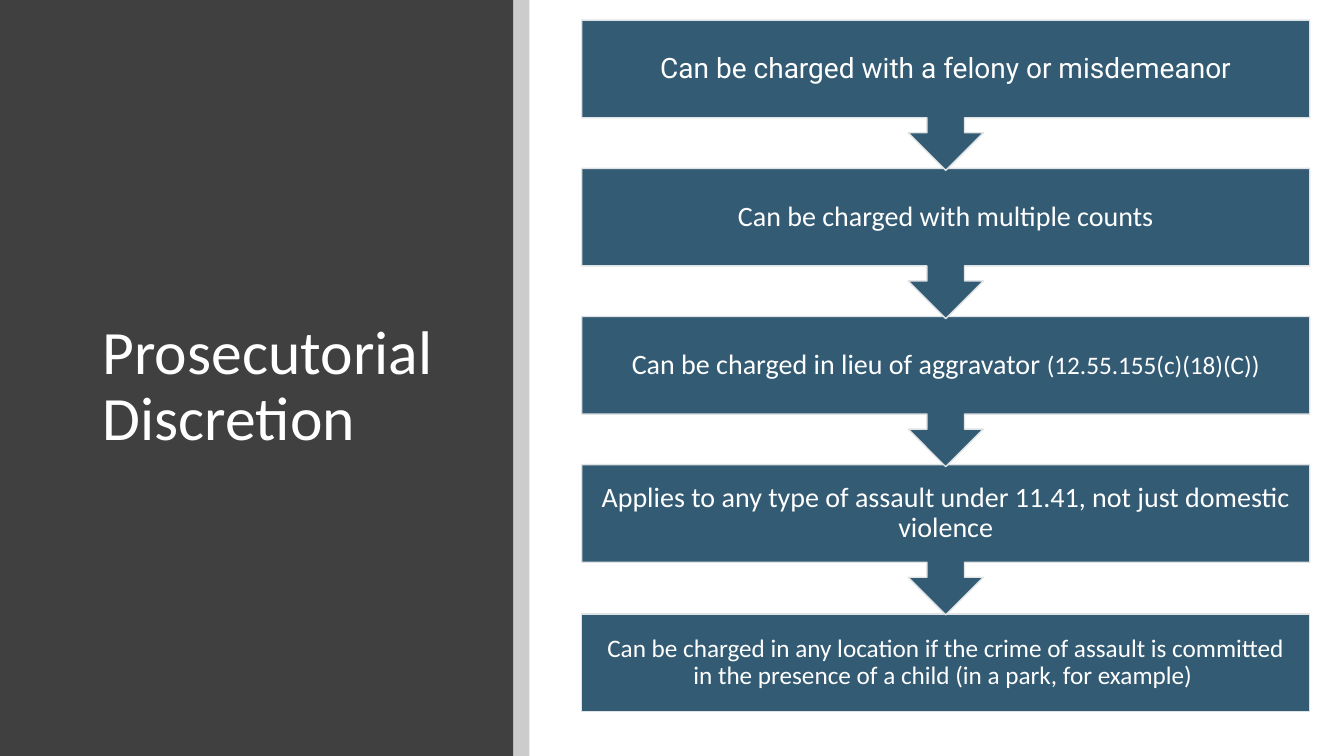
import pptx
import pptx.util
import pptx.dml.color
import pptx.enum.shapes
import pptx.enum.text
import pptx.oxml.ns
from lxml import etree

PX = 9144  # EMU per px, 100 px to the inch
SHAPE = pptx.enum.shapes.MSO_SHAPE
ALIGN = pptx.enum.text.PP_ALIGN
WHITE, GREY, BLACK = "FFFFFF", "404040", "000000"
BLUE, PALE = "335B74", "DFE3E5"

# Each step: inset in px, then runs of (text, size, font)
STEPS = [
    (16, [("Can be charged with a felony or misdemeanor", 20, "Roboto")]),
    (16, [("Can be charged with multiple counts", 20, "Calibri")]),
    (16, [("Can be charged in lieu of aggravator ", 20, "Calibri"),
          ("(12.55.155(c)(18)(C))", 18, "Calibri")]),
    (16, [("Applies to any type of assault under 11.41, not just domestic "
           "violence", 20, "Calibri")]),
    (14, [("Can be charged in any location if the crime of assault is "
           "committed in the presence of a child (in a park, for example) ",
           18, "Calibri")]),
]
STEP_LEFT, STEP_TOP, STEP_WIDTH = 577, 20, 722
BOX_HEIGHT, CALLOUT_HEIGHT = 97, 149
LAST_TOP = 609


def emu(*lengths):
    return [pptx.util.Emu(n * PX) for n in lengths]


def rgb(value):
    return pptx.dml.color.RGBColor.from_string(value)


def set_all(target, values):
    for name, value in values.items():
        setattr(target, name, value)


def add_block(s, kind, box, fill, line=None, alpha=None):
    sp = s.shapes.add_shape(kind, *emu(*box))
    sp.shadow.inherit = False
    sp.fill.solid()
    sp.fill.fore_color.rgb = rgb(fill)
    if line:
        sp.line.color.rgb = rgb(line)
        sp.line.width = pptx.util.Pt(1)
    else:
        sp.line.fill.background()
    if alpha is not None:
        qn = pptx.oxml.ns.qn
        clr = sp.fill._xPr.find(qn("a:solidFill")).find(qn("a:srgbClr"))
        etree.SubElement(clr, qn("a:alpha")).set("val", str(alpha * 1000))
    return sp


def write_text(sp, runs, align, inset=None):
    tf = sp.text_frame
    set_all(tf, {"word_wrap": True,
                 "vertical_anchor": pptx.enum.text.MSO_ANCHOR.MIDDLE})
    if inset is not None:
        margin, = emu(inset)
        set_all(tf, {"margin_" + side: margin
                     for side in ("left", "top", "right", "bottom")})
    p = tf.paragraphs[0]
    set_all(p, {"alignment": align, "line_spacing": 0.9})
    for text, size, font in runs:
        r = p.add_run()
        r.text = text
        set_all(r.font, {"size": pptx.util.Pt(size), "name": font})
        r.font.color.rgb = rgb(WHITE)


def add_step(s, index):
    last = len(STEPS) - 1
    top = STEP_TOP + (LAST_TOP - STEP_TOP) * index // last
    kind, height = SHAPE.DOWN_ARROW_CALLOUT, CALLOUT_HEIGHT
    if index == last:
        kind, height = SHAPE.RECTANGLE, BOX_HEIGHT
    sp = add_block(s, kind, (STEP_LEFT, top, STEP_WIDTH, height), BLUE, PALE)
    inset, runs = STEPS[index]
    write_text(sp, runs, ALIGN.CENTER, inset)


def main():
    prs = pptx.Presentation()
    prs.slide_width, prs.slide_height = emu(1333, 750)
    s = prs.slides.add_slide(prs.slide_layouts[6])

    # Title panel with its edge strip
    add_block(s, SHAPE.RECTANGLE, (0, 0, 509, 750), GREY)
    title = s.shapes.add_textbox(*emu(92, 89, 365, 591))
    write_text(title, [("Prosecutorial Discretion", 44, "Calibri")], ALIGN.LEFT)
    add_block(s, SHAPE.RECTANGLE, (509, 0, 16, 750), BLACK, alpha=20)

    # Steps, from the bottom up so that each arrow tip lies on the next box
    for index in reversed(range(len(STEPS))):
        add_step(s, index)

    prs.save("out.pptx")


if __name__ == "__main__":
    main()
